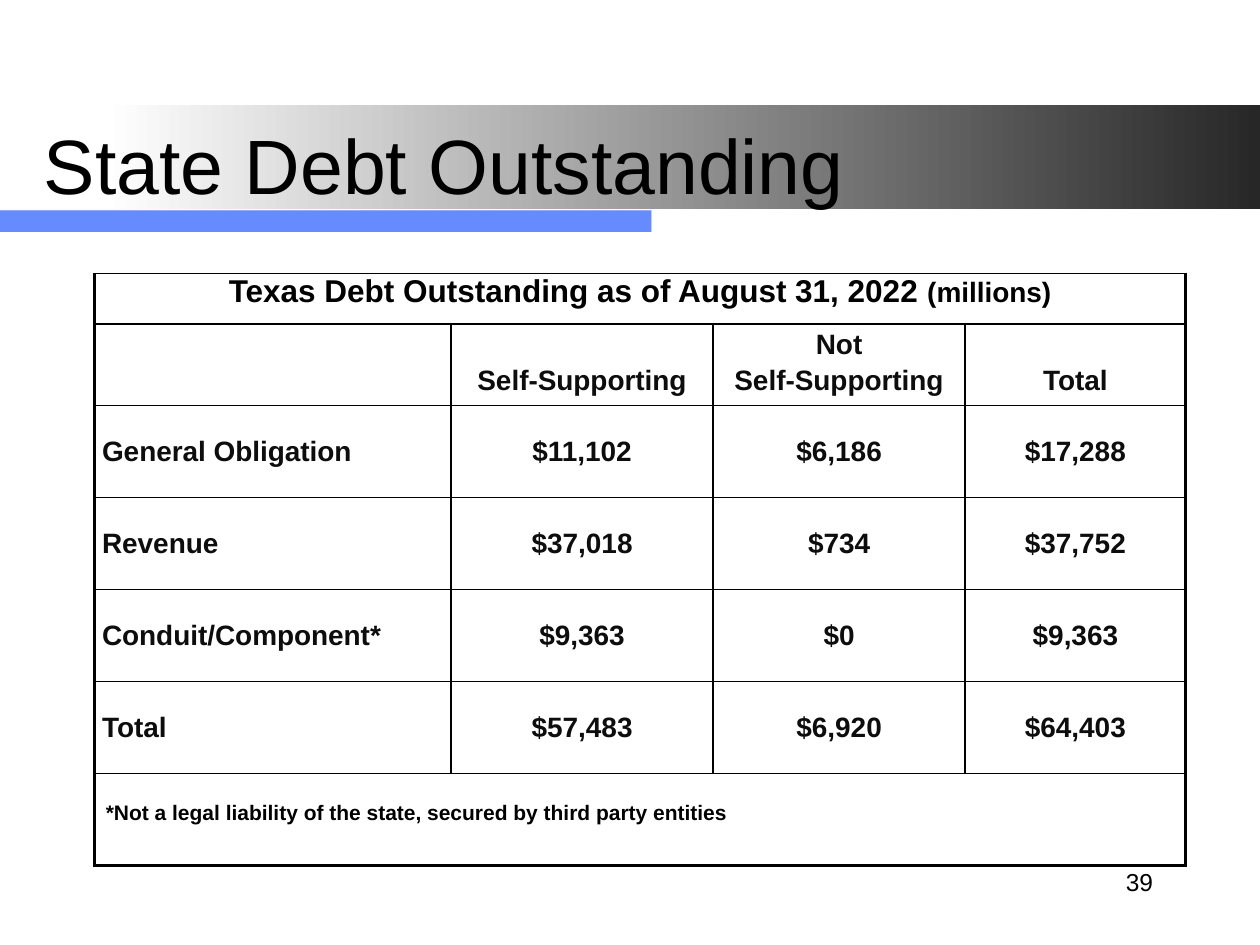
from lxml import etree
from pptx import Presentation
from pptx.dml.color import RGBColor
from pptx.enum.shapes import MSO_SHAPE
from pptx.enum.text import MSO_ANCHOR, PP_ALIGN
from pptx.oxml.ns import qn
from pptx.util import Inches, Pt

RECT = MSO_SHAPE.RECTANGLE
LEFT, MID, RIGHT = PP_ALIGN.LEFT, PP_ALIGN.CENTER, PP_ALIGN.RIGHT
TOP, CENTER, BOTTOM = MSO_ANCHOR.TOP, MSO_ANCHOR.MIDDLE, MSO_ANCHOR.BOTTOM

# Content
TITLE = "State Debt Outstanding"
PAGE = "39"
CAPTION = [("Texas Debt Outstanding as of August 31, 2022 ", 18), ("(millions)", 16)]
HEADS = ["", "Self-Supporting", "Not\nSelf-Supporting", "Total"]
DEBTS = [
    ("General Obligation", "$11,102", "$6,186", "$17,288"),
    ("Revenue", "$37,018", "$734", "$37,752"),
    ("Conduit/Component*", "$9,363", "$0", "$9,363"),
    ("Total", "$57,483", "$6,920", "$64,403"),
]
NOTE = "*Not a legal liability of the state, secured by third party entities"

# Grid
COLS = [2.83, 2.08, 2, 1.75]
ROWS = [0.4, 0.63] + [0.73] * (len(DEBTS) + 1)
BLACK, INK = "000000", "0D0D0D"
THIN, THICK = 1, 2.25


def color(code):
    return RGBColor.from_string(code)


def write(frame, text, size=16, ink=INK, bold=True, align=MID, anchor=CENTER):
    """Text is a string with line breaks, or a list of (words, size)."""
    frame.word_wrap = True
    frame.vertical_anchor = anchor
    lines = [[(t, size) for t in [line]] for line in text.split("\n")] \
        if isinstance(text, str) else [text]
    for i, line in enumerate(lines):
        para = frame.add_paragraph() if i else frame.paragraphs[0]
        para.alignment = align
        para.space_before = Pt(size * 0.2 if i else 0)
        for words, points in line:
            run = para.add_run()
            run.text = words
            font = run.font
            font.name, font.size, font.bold = "Arial", Pt(points), bold
            font.color.rgb = color(ink)


def label(box, text, **form):
    shape = slide.shapes.add_textbox(*map(Inches, box))
    write(shape.text_frame, text, ink=BLACK, bold=False, **form)


def band(box):
    shape = slide.shapes.add_shape(RECT, *map(Inches, box))
    shape.shadow.inherit = False
    shape.line.fill.background()
    return shape.fill


def border(cell, sides):
    props = cell._tc.get_or_add_tcPr()
    for side, width in zip("LRTB", sides):
        line = etree.SubElement(props, qn("a:ln" + side), w=str(Pt(width)))
        fill = etree.SubElement(line, qn("a:solidFill"))
        etree.SubElement(fill, qn("a:srgbClr"), val=BLACK)


def put(row, col, text, left=0, base=0, **form):
    cell = table.cell(row, col)
    cell.margin_left, cell.margin_bottom = Inches(left), Inches(base)
    write(cell.text_frame, text, **form)
    cell.vertical_anchor = form.get("anchor", CENTER)


deck = Presentation()
deck.slide_width, deck.slide_height = Inches(10), Inches(7.5)
slide = deck.slides.add_slide(deck.slide_layouts[6])

# Title bands: a fade to dark, and two sheer blue layers
fade = band((0.83, 0.83, 9.17, 0.83))
fade.gradient()
fade.gradient_angle = 0
for stop, code in zip(fade.gradient_stops, ("FFFFFF", "272727")):
    stop.color.rgb = color(code)
for layer in range(2):
    fill = band((0, 1.67, 5.17, 0.17))
    fill.solid()
    fill.fore_color.rgb = color("3366FF")
    tint = fill._xPr.find(".//" + qn("a:srgbClr"))
    etree.SubElement(tint, qn("a:alpha"), val="50000")

# Title and page number
label((7.17, 6.75, 2.08, 0.5), PAGE, size=14, align=RIGHT)
label((0.25, 0.67, 9, 1.25), TITLE, size=44, align=LEFT)

# Table frame
last = len(ROWS) - 1
end = len(COLS) - 1
table = slide.shapes.add_table(
    len(ROWS), len(COLS), Inches(0.75), Inches(2.17),
    Inches(sum(COLS)), Inches(sum(ROWS))).table
table.first_row = table.horz_banding = False
for c, width in enumerate(COLS):
    table.columns[c].width = Inches(width)
for r, height in enumerate(ROWS):
    table.rows[r].height = Inches(height)
    wide = r in (0, last)
    for c in range(len(COLS)):
        cell = table.cell(r, c)
        cell.margin_left = cell.margin_right = 0
        cell.margin_top = cell.margin_bottom = 0
        border(cell, (THICK if c == 0 else THIN,
                      THICK if wide or c == end else THIN,
                      THIN, THICK if r == last else THIN))
        cell.fill.background()
    if wide:
        table.cell(r, 0).merge(table.cell(r, end))

# Table text
put(0, 0, CAPTION, ink=BLACK, anchor=TOP)
for c, head in enumerate(HEADS):
    put(1, c, head, base=0.07, anchor=BOTTOM)
for r, (name, *sums) in enumerate(DEBTS, 2):
    put(r, 0, name, left=0.06, align=LEFT)
    for c, value in enumerate(sums, 1):
        put(r, c, value)
put(last, 0, NOTE, left=0.09, base=0.1, size=12, ink=BLACK, align=LEFT)

deck.save("out.pptx")
